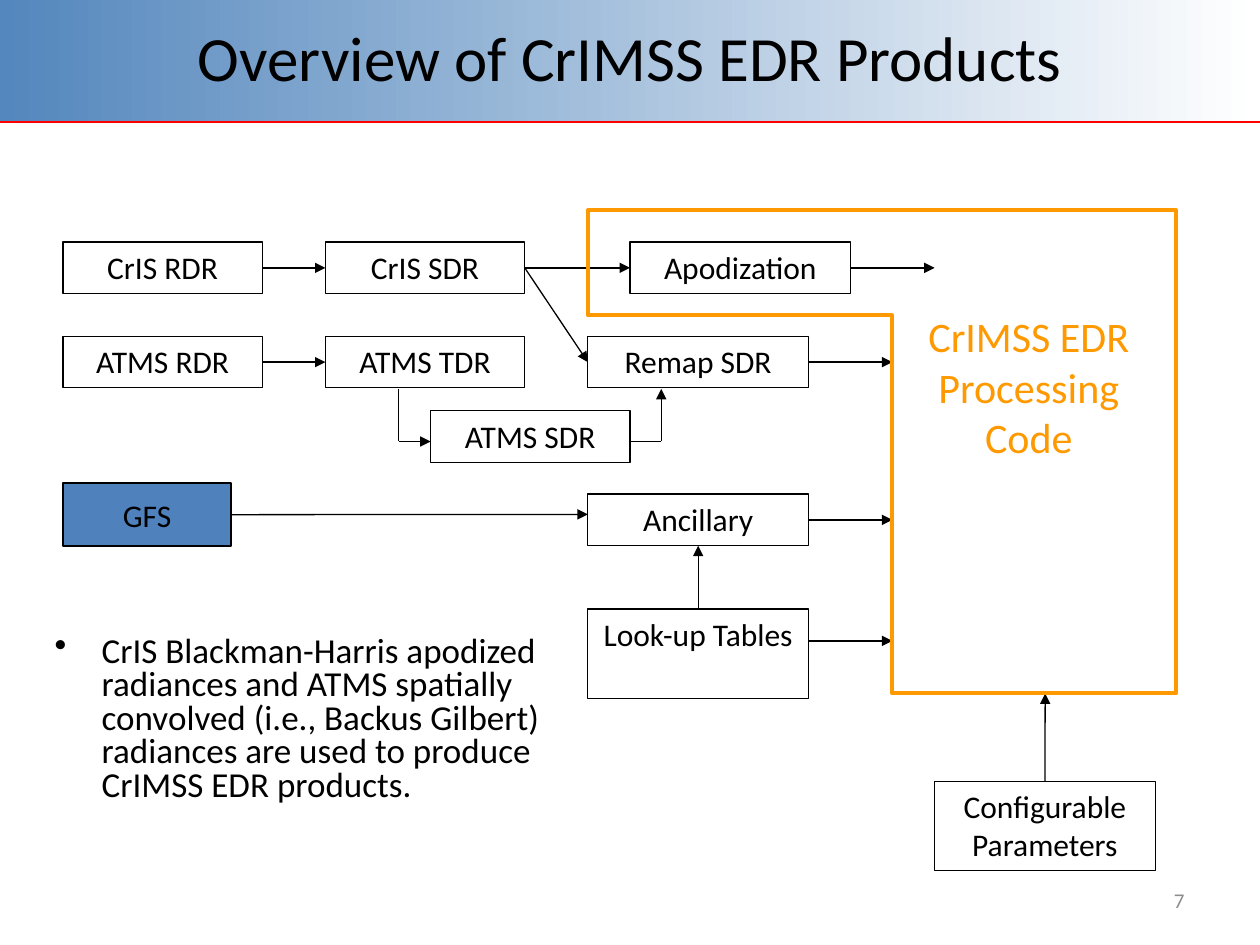
from dataclasses import dataclass
from lxml import etree
from pptx import Presentation
from pptx.dml.color import RGBColor as Rgb
from pptx.enum import shapes as sh, text as tx
from pptx.oxml import ns
from pptx.util import Cm, Pt


@dataclass(frozen=True)
class Theme:
    font: str = "Calibri"
    ink: Rgb = Rgb(0, 0, 0)
    band: Rgb = Rgb(0x54, 0x87, 0xBD)
    paper: Rgb = Rgb(255, 255, 255)
    rule: Rgb = Rgb(255, 0, 0)
    blue: Rgb = Rgb(0x4F, 0x81, 0xBD)
    gold: Rgb = Rgb(0xFF, 0x99, 0)
    gray: Rgb = Rgb(0x8C, 0x8C, 0x8C)
    title: int = 36
    code: int = 24
    body: int = 20
    label: int = 18
    page: int = 12


T = Theme()
MID, TOP = tx.MSO_ANCHOR.MIDDLE, tx.MSO_ANCHOR.TOP
LEFT, CENTER, RIGHT = tx.PP_ALIGN.LEFT, tx.PP_ALIGN.CENTER, tx.PP_ALIGN.RIGHT


def write(shape, words, size, color=T.ink, align=CENTER, anchor=TOP):
    frame = shape.text_frame
    frame.word_wrap = True
    frame.auto_size = tx.MSO_AUTO_SIZE.NONE
    frame.vertical_anchor = anchor
    frame.text = words
    para = frame.paragraphs[0]
    para.alignment = align
    para.font.name, para.font.size = T.font, Pt(size)
    para.font.color.rgb = color
    return para


def textbox(slide, box, *args, **style):
    area = slide.shapes.add_textbox(*map(Cm, box))
    return write(area, *args, **style)


def line(slide, start, end, color=T.ink, width=0.75, arrow=False):
    link = slide.shapes.add_connector(
        sh.MSO_CONNECTOR.STRAIGHT, *map(Cm, (*start, *end)))
    link.line.color.rgb = color
    link.line.width = Pt(width)
    if arrow:
        edge = link.line._get_or_add_ln()
        etree.SubElement(edge, ns.qn("a:tailEnd"), type="triangle")
    etree.SubElement(link.element.spPr, ns.qn("a:effectLst"))
    return link


def header(slide, box):
    left, top, width, height = box
    band = slide.shapes.add_shape(sh.MSO_SHAPE.RECTANGLE, *map(Cm, box))
    band.shadow.inherit = False
    band.line.fill.background()
    band.fill.gradient()
    band.fill.gradient_angle = 0
    for stop, place, color in zip(band.fill.gradient_stops, (0, 1), (T.band, T.paper)):
        stop.position = place
        stop.color.rgb = color
    base = top + height
    line(slide, (left, base), (left + width, base), T.rule, 1.25)
    title = slide.shapes.title
    title.element.getparent().append(title.element)
    title.left, title.top = Cm(left + 1.27), Cm(top)
    title.width, title.height = Cm(width - 2.54), Cm(2.29)
    write(title, "Overview of CrIMSS EDR Products", T.title, anchor=MID)


def note(slide, box):
    para = textbox(
        slide, box,
        "CrIS Blackman-Harris apodized radiances and ATMS spatially convolved "
        "(i.e., Backus Gilbert) radiances are used to produce CrIMSS EDR products.",
        T.body, align=LEFT)
    para.line_spacing = 0.8
    props = para._p.get_or_add_pPr()
    props.set("marL", str(Cm(0.95)))
    props.set("indent", str(Cm(-0.95)))
    mark = etree.Element(ns.qn("a:buChar"), char="•")
    props.find(ns.qn("a:defRPr")).addprevious(mark)


def diagram(slide, left, top):
    def at(x, y):
        return left + x, top + y

    def node(words, x, y, width=4.45, height=1.04, fill=None, anchor=TOP):
        shape = slide.shapes.add_shape(
            sh.MSO_SHAPE.RECTANGLE, *map(Cm, (*at(x, y), width, height)))
        shape.shadow.inherit = False
        shape.line.color.rgb = T.ink
        shape.line.width = Pt(0.75)
        if fill is None:
            shape.fill.background()
        else:
            shape.fill.solid()
            shape.fill.fore_color.rgb = fill
        write(shape, words, T.label, anchor=anchor)
        return shape

    def spot(shape, site):
        dx, dy = ((0.5, 0), (0, 0.5), (0.5, 1), (1, 0.5))[site]
        return ((shape.left + dx * shape.width) / Cm(1),
                (shape.top + dy * shape.height) / Cm(1))

    def flow(head, side, goal, site=None):
        end = at(*goal) if site is None else spot(goal, site)
        link = line(slide, spot(head, side), end, arrow=True)
        link.begin_connect(head, side)
        if site is not None:
            link.end_connect(goal, site)

    def elbow(start, bend, end):
        line(slide, at(*start), at(*bend))
        line(slide, at(*bend), at(*end), arrow=True)

    cols = 0, 5.29, 10.58
    wall, far, low = 16.72, 22.44, 9.74
    small = 4.02
    cris, sdr = (node(f"CrIS {kind}", x, 0.64, small)
                 for kind, x in zip(("RDR", "SDR"), cols))
    atms, tdr = (node(f"ATMS {kind}", x, 2.54, small)
                 for kind, x in zip(("RDR", "TDR"), cols))
    node("ATMS SDR", 7.41, 4.04, small)
    apod = node("Apodization", 11.43, 0.64)
    remap = node("Remap SDR", cols[2], 2.54)
    ancil = node("Ancillary", cols[2], 5.72)
    tables = node("Look-up Tables", cols[2], 8.04, height=1.8)
    params = node("Configurable Parameters", 17.57, 11.51, height=1.8)
    gfs = node("GFS", 0, 5.5, 3.39, 1.27, T.blue, MID)

    for head, goal in (cris, sdr), (atms, tdr), (sdr, apod), (sdr, remap):
        flow(head, 3, goal, 1)
    flow(tables, 0, ancil, 2)
    flow(gfs, 3, (cols[2], 6.13))
    flow(apod, 3, (17.57, 1.16))
    flow(remap, 3, (wall, 3.06))
    flow(ancil, 3, (wall, 6.24))
    flow(params, 0, (19.8, low))
    line(slide, at(15.03, 8.68), at(wall, 8.68), arrow=True)
    elbow((6.77, 3.6), (6.77, 4.66), (7.41, 4.66))
    elbow((11.43, 4.66), (12.06, 4.66), (12.06, 3.6))

    edge = [(cols[2], 0), (far, 0), (far, low), (wall, low), (wall, 2.12), (cols[2], 2.12)]
    first, *rest = [tuple(map(Cm, at(*point))) for point in edge]
    build = slide.shapes.build_freeform(*first)
    build.add_line_segments(rest, close=True)
    frame = build.convert_to_shape()
    frame.shadow.inherit = False
    frame.fill.background()
    frame.line.color.rgb = T.gold
    frame.line.width = Pt(2.25)
    textbox(slide, (*at(16.93, 1.9), 5.08, 4.32),
            "CrIMSS EDR Processing Code", T.code, T.gold)


def main():
    deck = Presentation()
    deck.slide_width, deck.slide_height = Cm(25.4), Cm(19.05)
    slide = deck.slides.add_slide(deck.slide_layouts[5])
    header(slide, (0, 0, 25.4, 2.46))
    note(slide, (0.85, 12.7, 10.58, 5.16))
    diagram(slide, 1.27, 4.24)
    textbox(slide, (18.2, 17.65, 5.93, 1.01), "7", T.page, T.gray, RIGHT, MID)
    deck.save("out.pptx")


if __name__ == "__main__":
    main()
